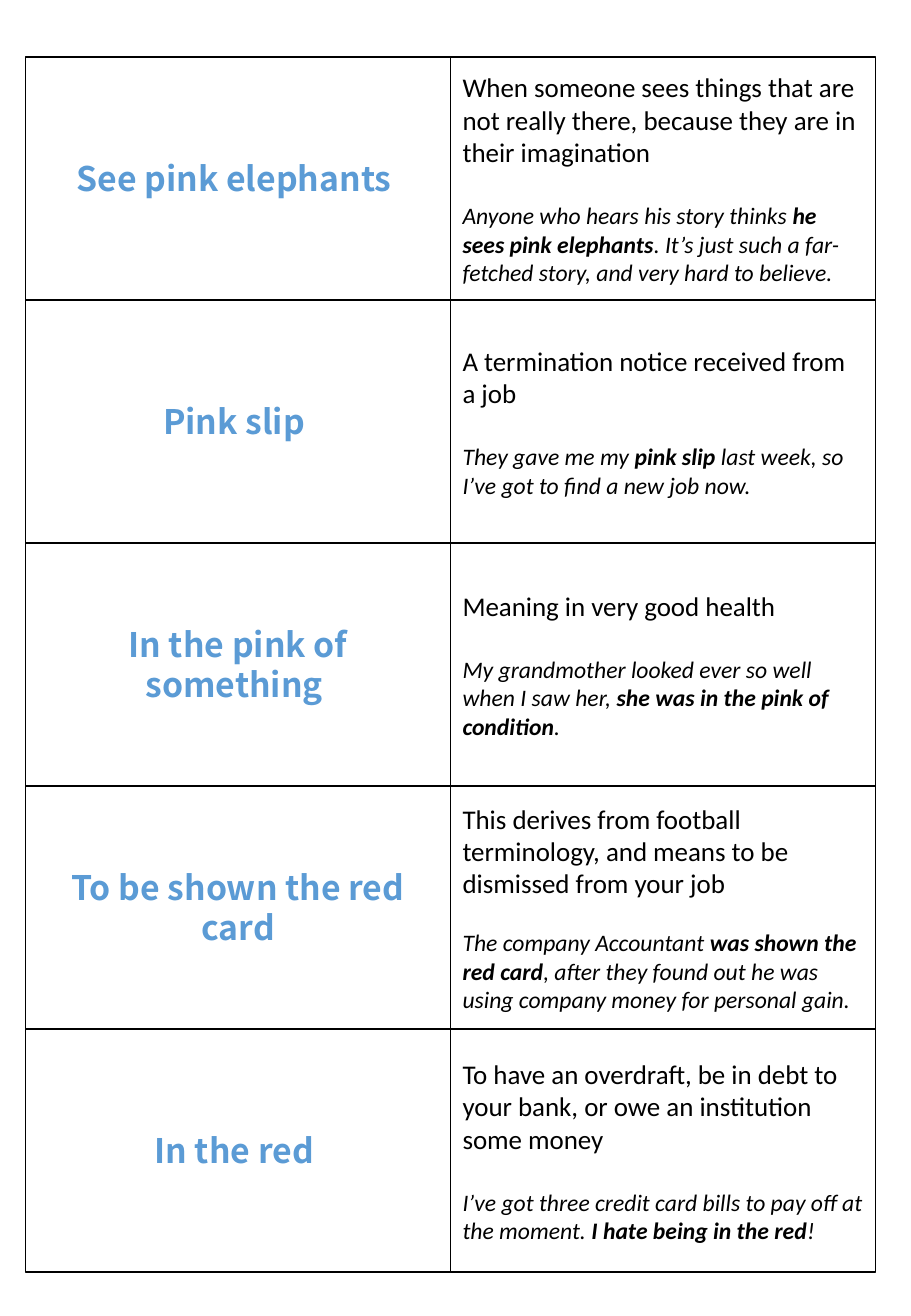
from dataclasses import dataclass

from pptx import Presentation
from pptx.dml.color import RGBColor
from pptx.enum.shapes import MSO_SHAPE as Shape
from pptx.enum.text import MSO_ANCHOR as Anchor, PP_ALIGN as Align
from pptx.util import Inches, Pt

LEFT, TOP, WIDE, HIGH = 0.21, 0.47, 3.5, 2
BLACK, WHITE, BLUE = "000000", "FFFFFF", "5B9BD5"

# Text formats
TERM = {"name": "Noto Sans CJK KR", "size": Pt(20), "bold": True}
SENSE = {"name": "Calibri", "size": Pt(16)}
USAGE = {"name": "Calibri", "size": Pt(14), "italic": True}
STRONG = USAGE | {"bold": True}


@dataclass
class Idiom:
    term: str
    sense: str
    before: str
    key: str
    after: str
    gap: float = 19.5


IDIOMS = [
    Idiom("See pink elephants ",
          "When someone sees things that are not really there, "
          "because they are in their imagination",
          "Anyone who hears his story thinks ", "he sees pink elephants",
          ". It’s just such a far-fetched story, and very hard to believe."),
    Idiom("Pink slip ",
          "A termination notice received from a job",
          "They gave me my ", "pink slip",
          " last week, so I’ve got to find a new job now."),
    Idiom("In the pink of something ",
          "Meaning in very good health",
          "My grandmother looked ever so well when I saw her,",
          " she was in the pink of condition", "."),
    Idiom("To be shown the red card",
          "This derives from football terminology, "
          "and means to be dismissed from your job",
          "The company Accountant ", "was shown the red card",
          ", after they found out he was using company money "
          "for personal gain.", 17),
    Idiom("In the red ",
          "To have an overdraft, be in debt to your bank, "
          "or owe an institution some money",
          "I’ve got three credit card bills to pay off at the moment. ",
          "I hate being in the red", "!"),
]


def paint(fill, tint: str) -> None:
    fill.solid()
    fill.fore_color.rgb = RGBColor.from_string(tint)


def add_card(slide, col: int, row: int):
    """Draw one outlined card and return its text frame."""
    card = slide.shapes.add_shape(
        Shape.RECTANGLE, Inches(LEFT + col * WIDE), Inches(TOP + row * HIGH),
        Inches(WIDE), Inches(HIGH))
    card.shadow.inherit = False
    paint(card.fill, WHITE)
    paint(card.line.fill, BLACK)
    card.line.width = Pt(1)
    frame = card.text_frame
    frame.word_wrap = True
    frame.vertical_anchor = Anchor.MIDDLE
    return frame


def add_run(para, text: str, style: dict, tint: str = BLACK) -> None:
    run = para.add_run()
    run.text = text
    for name, value in style.items():
        setattr(run.font, name, value)
    paint(run.font.fill, tint)


def add_idiom(slide, row: int, idiom: Idiom) -> None:
    # Term on the left
    para = add_card(slide, 0, row).paragraphs[0]
    para.alignment = Align.CENTER
    para.line_spacing = Pt(23.7)
    add_run(para, idiom.term, TERM, BLUE)

    # Meaning and example on the right
    frame = add_card(slide, 1, row)
    para = frame.paragraphs[0]
    para.alignment = Align.LEFT
    add_run(para, idiom.sense, SENSE)
    para = frame.add_paragraph()
    para.alignment = Align.LEFT
    para.space_before = Pt(idiom.gap)
    add_run(para, idiom.before, USAGE)
    add_run(para, idiom.key, STRONG)
    add_run(para, idiom.after, USAGE)


def main() -> None:
    deck = Presentation()
    deck.slide_width, deck.slide_height = Inches(7.5), Inches(10.83)
    slide = deck.slides.add_slide(deck.slide_layouts[6])
    for row, idiom in enumerate(IDIOMS):
        add_idiom(slide, row, idiom)
    deck.save("out.pptx")


if __name__ == "__main__":
    main()
